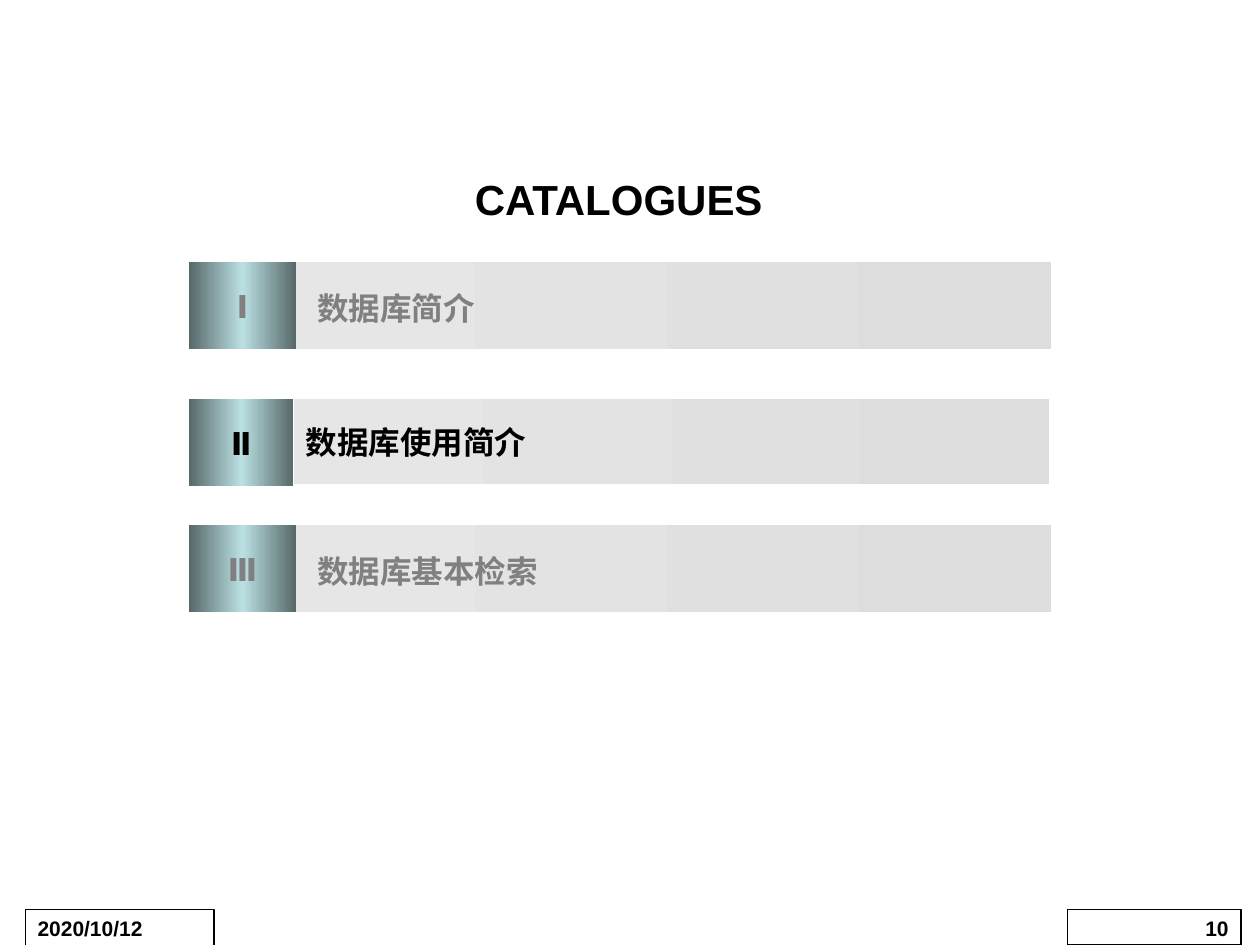
from lxml import etree
from pptx import Presentation
from pptx.dml.color import RGBColor
from pptx.enum.shapes import MSO_SHAPE
from pptx.enum.text import MSO_ANCHOR, PP_ALIGN
from pptx.oxml.ns import qn
from pptx.util import Inches, Pt

RECTANGLE = MSO_SHAPE.RECTANGLE
TOP, MIDDLE = MSO_ANCHOR.TOP, MSO_ANCHOR.MIDDLE
LEFT, CENTER, RIGHT = PP_ALIGN.LEFT, PP_ALIGN.CENTER, PP_ALIGN.RIGHT

BLACK = RGBColor(0x00, 0x00, 0x00)
WHITE = RGBColor(0xFF, 0xFF, 0xFF)
MUTED = RGBColor(0x80, 0x80, 0x80)
BAR_LIGHT = RGBColor(0xE6, 0xE6, 0xE6)
BAR_DARK = RGBColor(0xDD, 0xDD, 0xDD)
TEAL_DARK = RGBColor(0x57, 0x68, 0x69)
TEAL_LIGHT = RGBColor(0xBB, 0xE0, 0xE3)

BAR_COLORS = (BAR_LIGHT, BAR_DARK)
NUMERAL_COLORS = (TEAL_DARK, TEAL_LIGHT, TEAL_DARK)


class CatalogueSlide:
    """Holds the text style and the slide being filled."""

    font_name = "Arial"

    def __init__(self, slide):
        self.slide = slide

    def set_text(self, shape, text, size, color=BLACK, align=LEFT, anchor=MIDDLE, wrap=False):
        frame = shape.text_frame
        frame.word_wrap = wrap
        frame.vertical_anchor = anchor
        paragraph = frame.paragraphs[0]
        paragraph.text = text
        paragraph.alignment = align
        font = paragraph.font
        font.name = self.font_name
        font.size = Pt(size)
        font.bold = True
        font.color.rgb = color

    def rectangle(self, left, top, width, height):
        shape = self.slide.shapes.add_shape(
            RECTANGLE, Inches(left), Inches(top), Inches(width), Inches(height))
        shape.shadow.inherit = False
        return shape

    def gradient_box(self, left, top, width, height, colors):
        """Add a borderless box with evenly spaced colours from left to right."""
        shape = self.rectangle(left, top, width, height)
        shape.line.fill.background()
        shape.fill.gradient()
        shape.fill.gradient_angle = 0
        stops = shape._element.spPr.find(qn("a:gradFill")).find(qn("a:gsLst"))
        for stop in list(stops):
            stops.remove(stop)
        for index, color in enumerate(colors):
            position = 100000 * index // (len(colors) - 1)
            stop = etree.SubElement(stops, qn("a:gs"), pos=str(position))
            etree.SubElement(stop, qn("a:srgbClr"), val=str(color))
        return shape

    def text_box(self, left, top, width, height, text, size, **style):
        box = self.slide.shapes.add_textbox(
            Inches(left), Inches(top), Inches(width), Inches(height))
        self.set_text(box, text, size, **style)

    def muted_row(self, top, numeral, label):
        self.gradient_box(2.25, top, 6.09, 0.69, BAR_COLORS)
        tile = self.gradient_box(1.5, top, 0.85, 0.69, NUMERAL_COLORS)
        self.set_text(tile, numeral, 18, MUTED, CENTER)
        self.text_box(2.42, top + 0.16, 5.7, 0.4, label, 18, color=MUTED, wrap=True)

    def current_row(self, top, numeral, label):
        bar = self.gradient_box(2.33, top, 6, 0.67, BAR_COLORS)
        self.set_text(bar, label, 18)
        tile = self.gradient_box(1.5, top, 0.83, 0.69, NUMERAL_COLORS)
        self.set_text(tile, numeral, 18, align=CENTER)

    def footer_box(self, left, width, height, text, align):
        shape = self.rectangle(left, 7.22, width, height)
        shape.fill.solid()
        shape.fill.fore_color.rgb = WHITE
        shape.line.color.rgb = BLACK
        shape.line.width = Pt(0.75)
        self.set_text(shape, text, 12, align=align, anchor=TOP, wrap=True)


def main():
    presentation = Presentation()
    presentation.slide_width = Inches(10)
    presentation.slide_height = Inches(7.5)
    blank_layout = presentation.slide_layouts[6]
    catalogue = CatalogueSlide(presentation.slides.add_slide(blank_layout))

    catalogue.muted_row(2.08, "Ⅰ", "数据库简介")
    catalogue.current_row(3.17, "Ⅱ", "数据库使用简介")
    catalogue.muted_row(4.17, "Ⅲ", "数据库基本检索")
    catalogue.footer_box(0.2, 1.5, 0.47, "2020/10/12", LEFT)
    catalogue.footer_box(8.47, 1.38, 0.28, "10", RIGHT)
    catalogue.text_box(3.67, 1.33, 2.51, 0.5, "CATALOGUES", 24, anchor=TOP)

    presentation.save("out.pptx")


if __name__ == "__main__":
    main()
